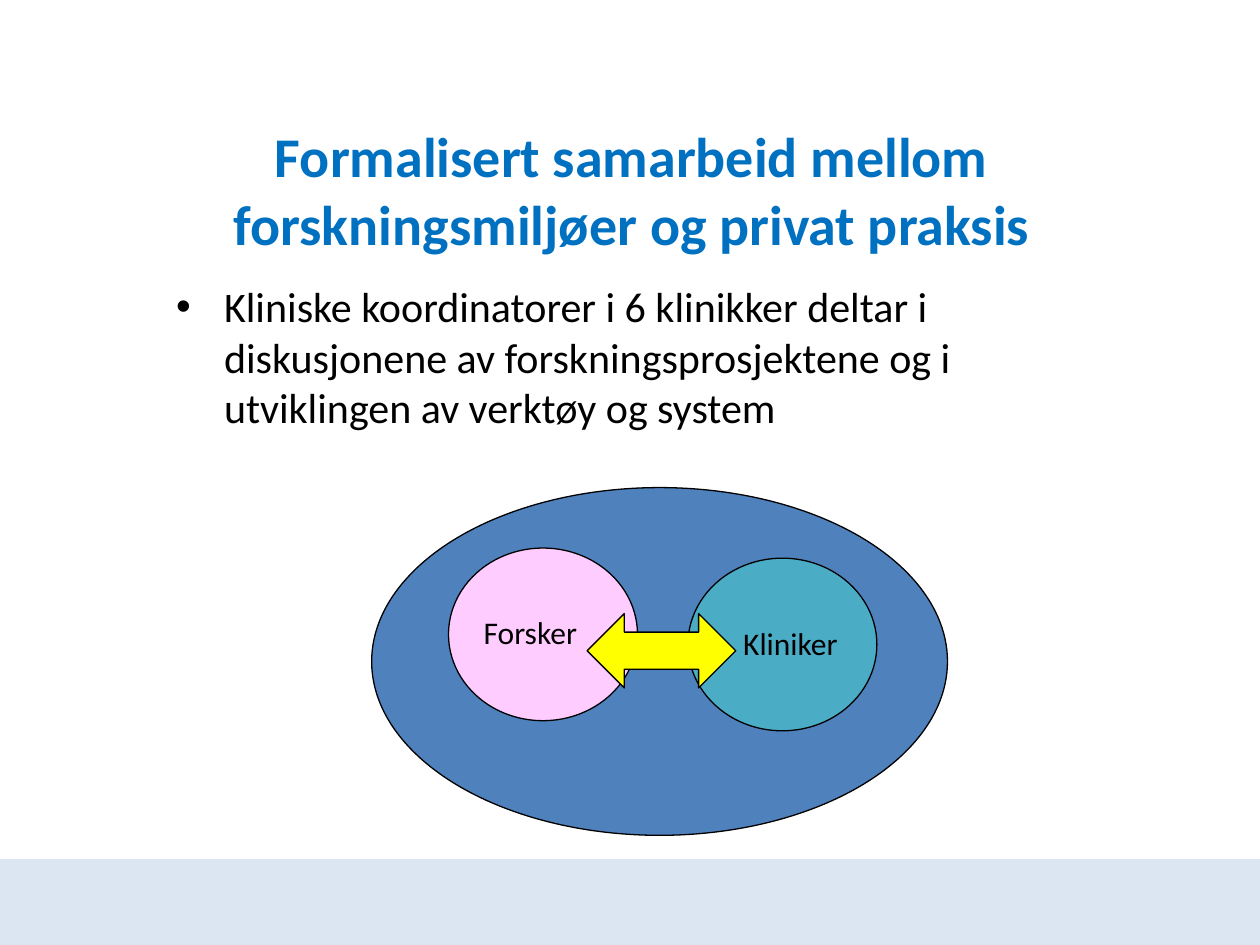
from dataclasses import dataclass

import pptx
import pptx.dml.color
import pptx.enum.shapes
import pptx.enum.text
import pptx.oxml
import pptx.oxml.ns
import pptx.util

SHAPE = pptx.enum.shapes.MSO_SHAPE
ALIGN = pptx.enum.text.PP_ALIGN
ANCHOR = pptx.enum.text.MSO_ANCHOR
SLIDE_WIDTH, SLIDE_HEIGHT = pptx.util.Inches(10), pptx.util.Inches(7.5)


@dataclass(frozen=True)
class Theme:
    font: str = "Calibri"
    heading: str = "0070C0"
    ink: str = "000000"
    band: str = "DCE6F2"
    arena: str = "4F81BD"
    researcher: str = "FFCCFF"
    clinician: str = "4BACC6"
    exchange: str = "FFFF00"
    title_size: float = 32
    body_size: float = 24
    label_size: float = 18
    outline: float = 0.75


THEME = Theme()


@dataclass(frozen=True)
class Box:
    """A region in percent of the slide's width and height."""
    left: float
    top: float
    width: float
    height: float

    def inner(self, across, down, width, height):
        return Box(self.left + across, self.top + down, width, height)

    def emu(self):
        return (int(SLIDE_WIDTH * self.left / 100), int(SLIDE_HEIGHT * self.top / 100),
                int(SLIDE_WIDTH * self.width / 100), int(SLIDE_HEIGHT * self.height / 100))


def rgb(value):
    return pptx.dml.color.RGBColor.from_string(value)


def style_text(paragraph, size, color, bold=False):
    for run in paragraph.runs:
        run.font.name = THEME.font
        run.font.size = pptx.util.Pt(size)
        run.font.color.rgb = rgb(color)
        run.font.bold = bold


def add_figure(slide, preset, box, fill, outlined=True):
    figure = slide.shapes.add_shape(preset, *box.emu())
    figure.shadow.inherit = False
    figure.fill.solid()
    figure.fill.fore_color.rgb = rgb(fill)
    if outlined:
        figure.line.color.rgb = rgb(THEME.ink)
        figure.line.width = pptx.util.Pt(THEME.outline)
    else:
        figure.line.fill.background()


def add_words(slide, box, words, size, wrap):
    frame = slide.shapes.add_textbox(*box.emu()).text_frame
    frame.word_wrap = wrap
    frame.text = words
    style_text(frame.paragraphs[0], size, THEME.ink)
    return frame


def place_title(slide, box, words):
    title = slide.shapes.title
    title.left, title.top, title.width, title.height = box.emu()
    frame = title.text_frame
    frame.text = words
    frame.word_wrap = True
    frame.auto_size = pptx.enum.text.MSO_AUTO_SIZE.NONE
    frame.vertical_anchor = ANCHOR.MIDDLE
    frame.paragraphs[0].alignment = ALIGN.CENTER
    style_text(frame.paragraphs[0], THEME.title_size, THEME.heading, bold=True)


def place_bullet(slide, box, words):
    frame = add_words(slide, box, words, THEME.body_size, wrap=True)
    frame.margin_right = pptx.util.Inches(0.3)
    indent = pptx.util.Inches(0.38)
    properties = frame.paragraphs[0]._p.get_or_add_pPr()
    properties.set("marL", str(indent))
    properties.set("indent", str(-indent))
    namespace = pptx.oxml.ns.nsdecls("a")
    for element in ('buFont {} typeface="Arial"', 'buChar {} char="•"'):
        properties.append(pptx.oxml.parse_xml(f"<a:{element.format(namespace)}/>"))


def place_collaboration(slide, box):
    """Two parties inside a shared arena, joined by a two-way arrow."""
    add_figure(slide, SHAPE.OVAL, box, THEME.arena)
    parties = (
        ("Kliniker", THEME.clinician, (25.1, 7.47), (28.5, 13.73)),
        ("Forsker", THEME.researcher, (6.1, 6.4), (7.9, 12.67)),
    )
    for party, fill, circle, label in parties:
        add_figure(slide, SHAPE.OVAL, box.inner(*circle, 15, 18.27), fill)
        add_words(slide, box.inner(*label, 11.5, 5.87), party, THEME.label_size, wrap=False)
    add_figure(slide, SHAPE.LEFT_RIGHT_ARROW, box.inner(17.1, 13.33, 11.8, 7.87),
               THEME.exchange)


def main():
    deck = pptx.Presentation()
    deck.slide_width, deck.slide_height = SLIDE_WIDTH, SLIDE_HEIGHT
    slide = deck.slides.add_slide(deck.slide_layouts.get_by_name("Title Only"))

    add_figure(slide, SHAPE.RECTANGLE, Box(0, 90.93, 100, 9.07), THEME.band, outlined=False)
    place_title(slide, Box(5.6, 13.2, 89.1, 13.6),
                "Formalisert samarbeid mellom forskningsmiljøer og privat praksis")
    place_bullet(slide, Box(13, 29.07, 78.7, 22.93),
                 "Kliniske koordinatorer i 6 klinikker deltar i diskusjonene av "
                 "forskningsprosjektene og i utviklingen av verktøy og system")
    place_collaboration(slide, Box(29.5, 51.6, 45.7, 36.8))

    deck.save("out.pptx")


if __name__ == "__main__":
    main()
